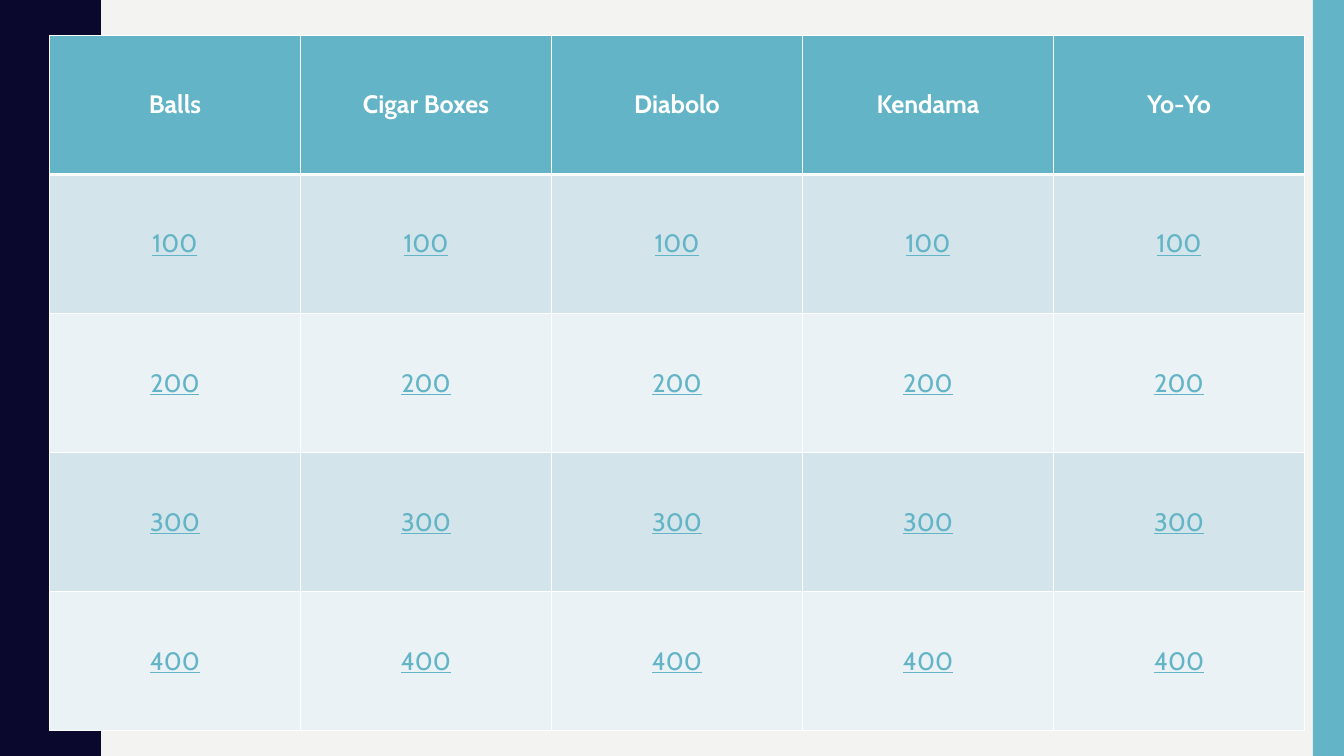
from pptx import Presentation
from pptx.dml.color import RGBColor
from pptx.enum.shapes import MSO_SHAPE
from pptx.enum.text import MSO_ANCHOR, PP_ALIGN
from pptx.oxml import parse_xml
from pptx.oxml.ns import nsdecls
from pptx.util import Inches, Pt

TOPICS = ["Balls", "Cigar Boxes", "Diabolo", "Kendama", "Yo-Yo"]
POINTS = ["100", "200", "300", "400"]
ROWS = [TOPICS] + [[p] * len(TOPICS) for p in POINTS]

NAVY, TEAL, WHITE, PAPER = "0B082E", "62B4C6", "FFFFFF", "F3F3F2"
BANDS = ["D3E5EA", "EAF2F5"]
FONT = "Cabin"

WIDE, HIGH = 13.33, 7.5
BAR = 0.31
LEFT, TOP, COL, ROW = 0.49, 0.35, 2.49, 1.38
WAVES = 5
# Rising half of one wave along the left edge: (x, y) in inches
RISE = [(0.78, 0), (0.78, 0.07), (0.79, 0.14), (0.8, 0.2), (0.81, 0.25),
        (0.83, 0.29), (0.85, 0.33), (0.87, 0.38), (0.89, 0.42), (0.91, 0.46),
        (0.93, 0.5), (0.95, 0.55), (0.96, 0.61), (0.97, 0.68), (0.97, 0.75)]


def rgb(code):
    return RGBColor.from_string(code)


def paint(shape, code):
    shape.shadow.inherit = False
    shape.fill.solid()
    shape.fill.fore_color.rgb = rgb(code)
    shape.line.fill.background()


def write(cell, text, size=18, color=TEAL, bold=False, under=False):
    cell.vertical_anchor = MSO_ANCHOR.MIDDLE
    para = cell.text_frame.paragraphs[0]
    para.alignment = PP_ALIGN.CENTER
    run = para.add_run()
    run.text = text
    font = run.font
    font.name, font.size = FONT, Pt(size)
    font.bold, font.underline = bold, under
    font.color.rgb = rgb(color)


def border(cell, **widths):
    """Draw white cell borders; widths in points by side L, R, T, B."""
    props = cell._tc.get_or_add_tcPr()
    for i, side in enumerate("LRTB"):
        props.insert(i, parse_xml(
            f'<a:ln{side} {nsdecls("a")} w="{Pt(widths.get(side, 1))}">'
            f'<a:solidFill><a:srgbClr val="{WHITE}"/></a:solidFill></a:ln{side}>'))


def add_edge(slide):
    """Draw the wavy band on the left and the plain bar on the right."""
    step = HIGH / WAVES
    wave = RISE + [(x, step - y) for x, y in RISE[-2::-1]]
    curve = [(x, y + n * step) for n in range(WAVES) for x, y in wave]
    pen = slide.shapes.build_freeform(0, 0, scale=Inches(1))
    pen.add_line_segments(curve + [(0, HIGH)], close=True)
    paint(pen.convert_to_shape(), NAVY)
    bar = slide.shapes.add_shape(MSO_SHAPE.RECTANGLE, Inches(WIDE - BAR), 0,
                                 Inches(BAR), Inches(HIGH))
    paint(bar, TEAL)


def add_board(slide):
    table = slide.shapes.add_table(
        len(ROWS), len(TOPICS), Inches(LEFT), Inches(TOP),
        Inches(COL * len(TOPICS)), Inches(ROW * len(ROWS))).table
    for col in table.columns:
        col.width = Inches(COL)
    for r, texts in enumerate(ROWS):
        table.rows[r].height = Inches(ROW)
        for c, text in enumerate(texts):
            cell = table.cell(r, c)
            cell.fill.solid()
            cell.fill.fore_color.rgb = rgb(BANDS[(r - 1) % 2] if r else TEAL)
            if r == 0:
                write(cell, text, color=WHITE, bold=True)
            else:
                write(cell, text, under=True)
            border(cell, T=3 if r == 1 else 1, B=3 if r == 0 else 1)


def main():
    deck = Presentation()
    deck.slide_width, deck.slide_height = Inches(WIDE), Inches(HIGH)
    slide = deck.slides.add_slide(deck.slide_layouts[6])
    slide.background.fill.solid()
    slide.background.fill.fore_color.rgb = rgb(PAPER)
    add_edge(slide)
    add_board(slide)
    deck.save("out.pptx")


if __name__ == "__main__":
    main()
